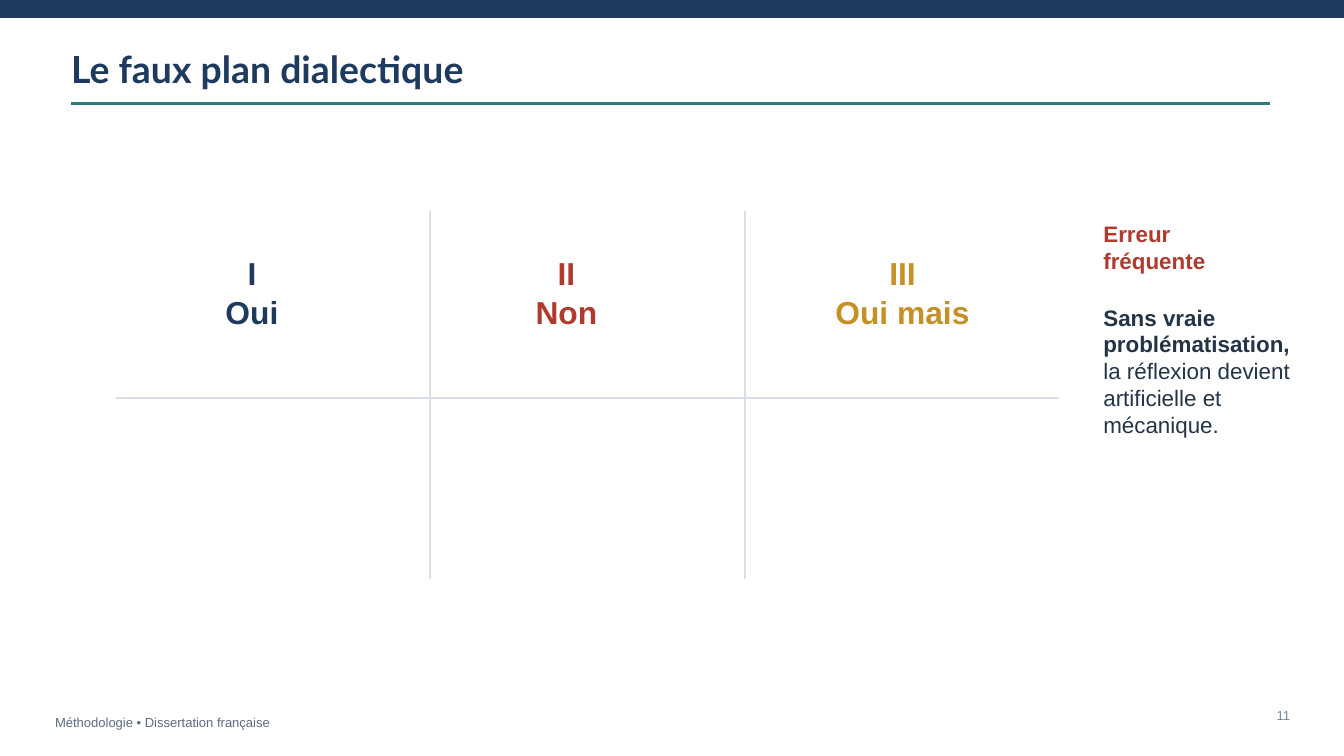
from dataclasses import dataclass

from lxml.etree import SubElement
from pptx import Presentation
from pptx.dml.color import RGBColor
from pptx.enum.shapes import MSO_CONNECTOR as Connector, MSO_SHAPE as Shape
from pptx.enum.text import MSO_ANCHOR as Anchor, PP_ALIGN as Align
from pptx.oxml.ns import qn
from pptx.util import Inches, Pt

NAVY = RGBColor(0x1E, 0x3A, 0x5F)
TEAL = RGBColor(0x2C, 0x7A, 0x7B)
RED = RGBColor(0xB0, 0x3A, 0x2E)
GOLD = RGBColor(0xC6, 0x90, 0x26)
INK = RGBColor(0x24, 0x34, 0x47)
RULE_GREY = RGBColor(0xD9, 0xDE, 0xE7)
FOOTER_GREY = RGBColor(0x5D, 0x6B, 0x82)
NUMBER_GREY = RGBColor(0x7A, 0x86, 0x98)

SLIDE_WIDTH = 10
SLIDE_HEIGHT = SLIDE_WIDTH * 9 / 16
MARGIN = 0.53
GRID_LEFT, GRID_TOP, GRID_BOTTOM = 0.86, 1.57, 4.31
COLUMN_WIDTH, COLUMN_COUNT = 2.34, 3
HEADER_BOTTOM = 2.96
NOTE_LEFT = 8.21


@dataclass(frozen=True)
class Span:
    text: str
    bold: bool = False


@dataclass(frozen=True)
class Label:
    left: float
    top: float
    width: float
    height: float
    paragraphs: tuple[tuple[Span, ...], ...]
    size: float
    color: RGBColor
    font: str = "Arial"
    align: Align = Align.LEFT


@dataclass(frozen=True)
class Part:
    number: str
    answer: str
    color: RGBColor
    inset: float = 0.23
    width: float = 1.57


PARTS = (
    Part("I", "Oui", NAVY),
    Part("II", "Non", RED),
    Part("III", "Oui mais", GOLD, inset=0.2, width=1.95),
)


def column_left(column: int) -> float:
    return GRID_LEFT + column * COLUMN_WIDTH


def part_label(column: int, part: Part) -> Label:
    lines = tuple((Span(text, True),) for text in (part.number, part.answer))
    return Label(column_left(column) + part.inset, 1.8, part.width, 0.75,
                 lines, 17, part.color, align=Align.CENTER)


def draw_label(page, label: Label) -> None:
    box = page.shapes.add_textbox(
        *map(Inches, (label.left, label.top, label.width, label.height)))
    frame = box.text_frame
    frame_format = {
        "word_wrap": True, "vertical_anchor": Anchor.MIDDLE,
        "margin_left": 0, "margin_top": 0, "margin_right": 0, "margin_bottom": 0,
    }
    for name, value in frame_format.items():
        setattr(frame, name, value)
    for index, spans in enumerate(label.paragraphs):
        para = frame.add_paragraph() if index else frame.paragraphs[0]
        para.alignment = label.align
        for span in spans:
            run = para.add_run()
            run.text = span.text
            font_format = {"name": label.font, "size": Pt(label.size), "bold": span.bold}
            for name, value in font_format.items():
                setattr(run.font, name, value)
            run.font.color.rgb = label.color


def draw_line(page, start: tuple[float, float], end: tuple[float, float],
              color: RGBColor, width: float) -> None:
    line = page.shapes.add_connector(Connector.STRAIGHT, *map(Inches, start + end))
    line.line.color.rgb = color
    line.line.width = Pt(width)
    SubElement(line._element.spPr, qn("a:effectLst"))


def draw_top_band(page) -> None:
    band = page.shapes.add_shape(
        Shape.RECTANGLE, 0, 0, Inches(SLIDE_WIDTH), Inches(0.13))
    band.shadow.inherit = False
    band.fill.solid()
    band.fill.fore_color.rgb = NAVY
    band.line.color.rgb = NAVY
    band.line.width = Pt(1)


def draw_grid(page) -> None:
    draw_line(page, (GRID_LEFT, HEADER_BOTTOM),
              (column_left(COLUMN_COUNT), HEADER_BOTTOM), RULE_GREY, 1.1)
    for column in range(1, COLUMN_COUNT):
        x = column_left(column)
        draw_line(page, (x, GRID_TOP), (x, GRID_BOTTOM), RULE_GREY, 1.1)
    for column, part in enumerate(PARTS):
        draw_label(page, part_label(column, part))


def main() -> None:
    deck = Presentation()
    deck.slide_width, deck.slide_height = Inches(SLIDE_WIDTH), Inches(SLIDE_HEIGHT)
    page = deck.slides.add_slide(deck.slide_layouts[6])

    draw_top_band(page)
    draw_label(page, Label(0.41, 5.29, 3.15, 0.17,
                           ((Span("Méthodologie • Dissertation française"),),),
                           7, FOOTER_GREY))
    draw_label(page, Label(MARGIN, 0.34, 6.53, 0.34,
                           ((Span("Le faux plan dialectique", True),),),
                           20, NAVY, font="Lato"))
    draw_line(page, (MARGIN, 0.77), (9.45, 0.77), TEAL, 1.5)
    draw_grid(page)

    closing_labels = (
        Label(NOTE_LEFT, 1.73, 1.2, 0.21,
              ((Span("Erreur fréquente", True),),), 12, RED),
        Label(NOTE_LEFT, 2.01, 1.43, 1.5,
              ((Span("Sans vraie problématisation,", True),
                Span(" la réflexion devient artificielle et mécanique.")),), 12, INK),
        Label(9.34, 5.24, 0.26, 0.17,
              ((Span("11"),),), 7, NUMBER_GREY, align=Align.RIGHT),
    )
    for label in closing_labels:
        draw_label(page, label)
    deck.save("out.pptx")


if __name__ == "__main__":
    main()
